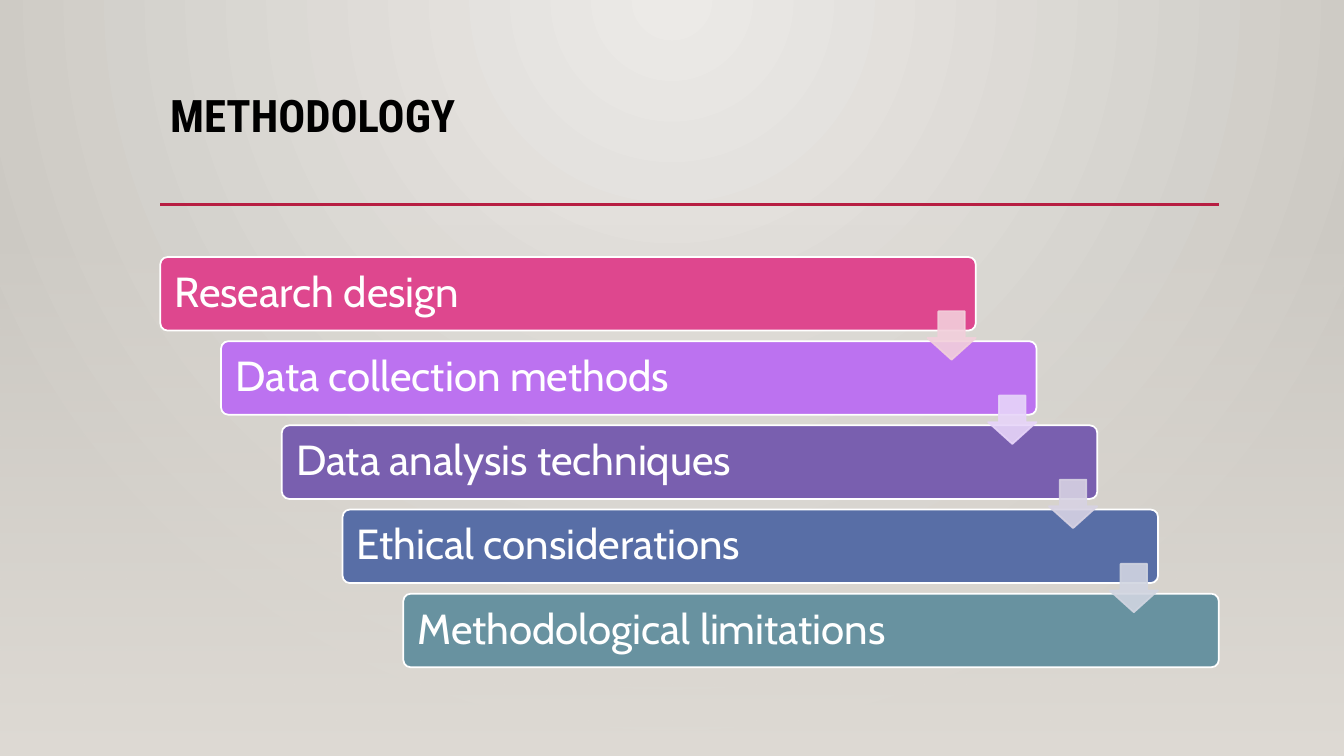
"""Build a methodology slide with five staggered bars linked by down arrows."""
from lxml import etree
from pptx import Presentation
from pptx.dml.color import RGBColor
from pptx.enum.shapes import MSO_CONNECTOR as CONN, MSO_SHAPE as SHAPE
from pptx.enum.text import MSO_ANCHOR as ANCHOR, PP_ALIGN as ALIGN
from pptx.oxml.ns import qn
from pptx.util import Pt

TITLE = "METHODOLOGY"
STEPS = [
    ("Research design", RGBColor(0xDE, 0x47, 0x8E), RGBColor(0xF2, 0xCF, 0xDB)),
    ("Data collection methods", RGBColor(0xBC, 0x72, 0xF0), RGBColor(0xE7, 0xD5, 0xF9)),
    ("Data analysis techniques", RGBColor(0x79, 0x5F, 0xAF), RGBColor(0xD7, 0xD2, 0xE3)),
    ("Ethical considerations", RGBColor(0x58, 0x6E, 0xA6), RGBColor(0xD1, 0xD5, 0xE1)),
    ("Methodological limitations", RGBColor(0x68, 0x92, 0xA0), None),
]
BLACK = RGBColor(0, 0, 0)
WHITE = RGBColor(0xFF, 0xFF, 0xFF)
RED = RGBColor(0xB7, 0x1E, 0x42)
LIGHT = RGBColor(0xEC, 0xEA, 0xE7)
DARK = RGBColor(0xCA, 0xC7, 0xC1)
VEIL = RGBColor(0xDF, 0xDB, 0xD5)

SLIDE_W, SLIDE_H = 960, 540
LEFT, RULE_Y, RULE_W = 114.48, 146, 756
VEIL_TOP = 159
BAR_TOP, BAR_W, BAR_H = 183.6, 582.5, 52.56
STEP_X, STEP_Y = 43.4, 60.12
ARROW, ARROW_DROP = 34.56, 38.8


def set_text(sp, text, font, size, color, bold=False, anchor=ANCHOR.TOP, inset=None):
    tf = sp.text_frame
    tf.word_wrap = True
    tf.vertical_anchor = anchor
    if inset is not None:
        tf.margin_left = tf.margin_right = Pt(inset)
        tf.margin_top = tf.margin_bottom = Pt(inset)
    p = tf.paragraphs[0]
    p.alignment = ALIGN.LEFT
    p.line_spacing = 0.9
    r = p.add_run()
    r.text = text
    r.font.name, r.font.size = font, Pt(size)
    r.font.bold, r.font.color.rgb = bold, color


def set_alpha(fill_element, percent):
    for color in fill_element.iter(qn("a:srgbClr")):
        etree.SubElement(color, qn("a:alpha"), val=str(percent * 1000))


def set_gradient(fill, *colors):
    fill.gradient()
    for stop, color in zip(fill.gradient_stops, colors):
        stop.color.rgb = color


def add_shape(s, kind, x, y, w, h, *adjustments):
    sp = s.shapes.add_shape(kind, Pt(x), Pt(y), Pt(w), Pt(h))
    sp.shadow.inherit = False
    for i, value in enumerate(adjustments):
        sp.adjustments[i] = value
    return sp


def paint(sp, fill, line):
    sp.fill.solid()
    sp.fill.fore_color.rgb = fill
    sp.line.color.rgb = line
    sp.line.width = Pt(1.25)


def add_backdrop(s):
    set_gradient(s.background.fill, LIGHT, DARK)
    grad = next(s.element.iter(qn("a:gradFill")))
    grad.remove(grad.find(qn("a:lin")))
    circle = etree.SubElement(grad, qn("a:path"), path="circle")
    etree.SubElement(circle, qn("a:fillToRect"), l="43000", t="0", r="43000", b="100000")

    veil = add_shape(s, SHAPE.RECTANGLE, 0, VEIL_TOP, SLIDE_W, SLIDE_H - VEIL_TOP)
    set_gradient(veil.fill, VEIL, VEIL)
    veil.fill.gradient_angle = 270
    veil.line.fill.background()
    set_alpha(next(veil.element.iter(qn("a:gs"))), 0)


def add_heading(s):
    box = s.shapes.add_textbox(Pt(LEFT), Pt(63.4), Pt(RULE_W), Pt(82.8))
    set_text(box, TITLE, "Roboto Condensed", 32, BLACK, bold=True)
    rule = s.shapes.add_connector(
        CONN.STRAIGHT, Pt(LEFT), Pt(RULE_Y), Pt(LEFT + RULE_W), Pt(RULE_Y))
    rule.line.color.rgb = RED
    rule.line.width = Pt(2.5)
    etree.SubElement(rule.element.spPr, qn("a:effectLst"))


def add_steps(s):
    spots = [(LEFT + i * STEP_X, BAR_TOP + i * STEP_Y) for i in range(len(STEPS))]
    for (x, y), (text, color, _) in zip(spots, STEPS):
        bar = add_shape(s, SHAPE.ROUNDED_RECTANGLE, x, y, BAR_W, BAR_H, 0.1)
        paint(bar, color, WHITE)
        set_text(bar, text, "Cabin", 30, WHITE, anchor=ANCHOR.MIDDLE, inset=8.64)
    for (x, y), (_, _, tint) in zip(spots, STEPS):
        if tint is not None:
            arrow = add_shape(s, SHAPE.DOWN_ARROW, x + BAR_W - ARROW, y + ARROW_DROP,
                              ARROW, ARROW, 0.55, 0.45)
            paint(arrow, tint, tint)
            set_alpha(arrow.element.spPr, 90)


def main():
    prs = Presentation()
    prs.slide_width, prs.slide_height = Pt(SLIDE_W), Pt(SLIDE_H)
    s = prs.slides.add_slide(prs.slide_layouts[6])
    add_backdrop(s)
    add_heading(s)
    add_steps(s)
    prs.save("out.pptx")


if __name__ == "__main__":
    main()
